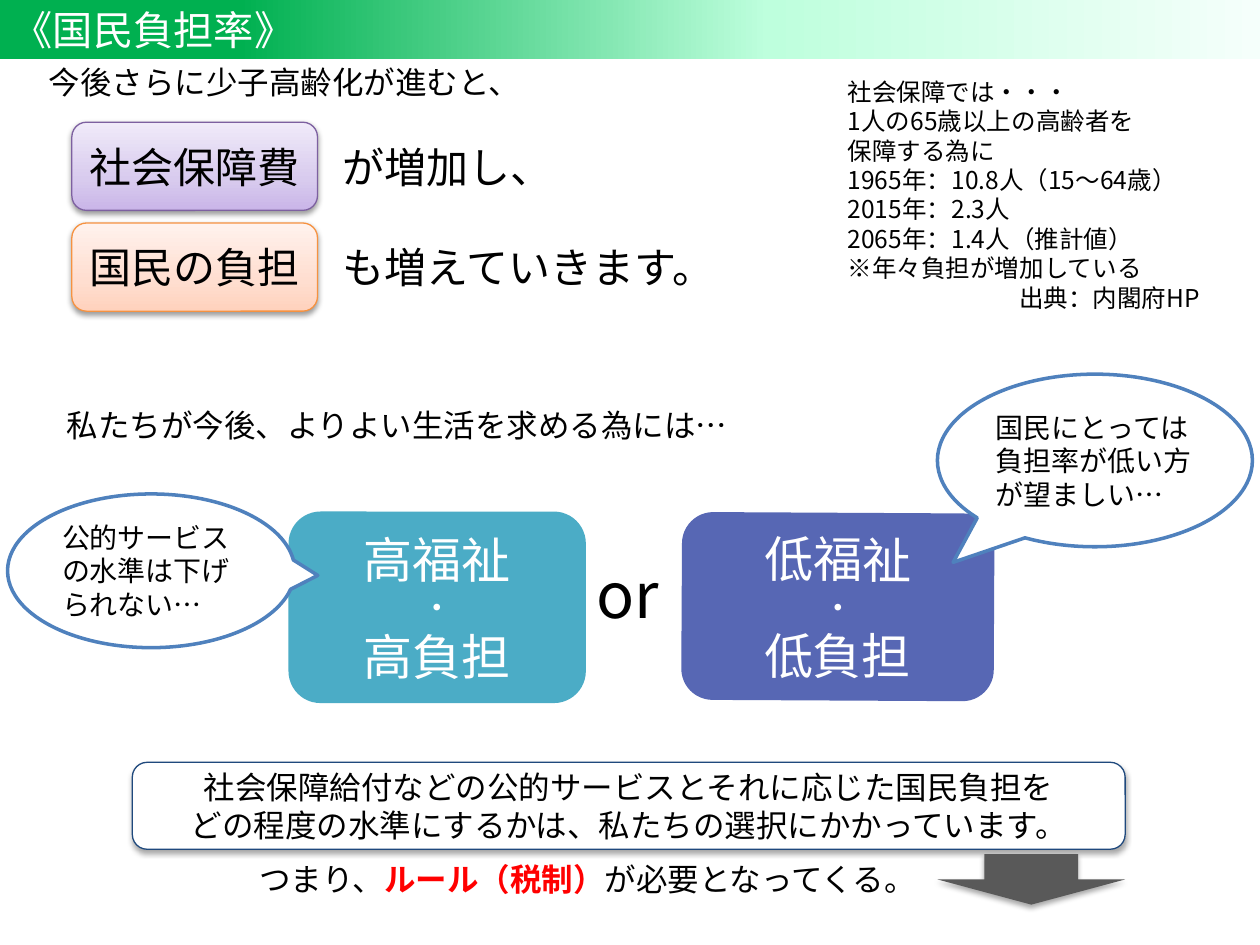
from lxml import etree
from pptx import Presentation
from pptx.dml.color import RGBColor
from pptx.enum.shapes import MSO_SHAPE
from pptx.enum.text import MSO_ANCHOR, MSO_AUTO_SIZE, PP_ALIGN
from pptx.oxml.ns import qn
from pptx.util import Inches, Pt

ROUND = MSO_SHAPE.ROUNDED_RECTANGLE
OVAL = MSO_SHAPE.OVAL_CALLOUT
FRAME = MSO_SHAPE.ROUNDED_RECTANGULAR_CALLOUT
ARROW = MSO_SHAPE.DOWN_ARROW
LEFT, MID = PP_ALIGN.LEFT, PP_ALIGN.CENTER
TOP, CORE = MSO_ANCHOR.TOP, MSO_ANCHOR.MIDDLE
FIXED = MSO_AUTO_SIZE.NONE

BLACK = RGBColor(0x00, 0x00, 0x00)
WHITE = RGBColor(0xFF, 0xFF, 0xFF)
RED = RGBColor(0xFF, 0x00, 0x00)
GRAY = RGBColor(0x59, 0x59, 0x59)
TEAL = RGBColor(0x4B, 0xAC, 0xC6)
INDIGO = RGBColor(0x57, 0x67, 0xB4)
BLUE = RGBColor(0x4F, 0x81, 0xBD)
NAVY = RGBColor(0x1F, 0x49, 0x7D)
PURPLE = RGBColor(0x7D, 0x60, 0xA0)
ORANGE = RGBColor(0xF6, 0x92, 0x40)
LILAC = [(0, RGBColor(0xC9, 0xB5, 0xE8)), (35, RGBColor(0xD8, 0xCB, 0xEE)),
         (100, RGBColor(0xF0, 0xEA, 0xF9))]
PEACH = [(0, RGBColor(0xFF, 0xD2, 0xBD)), (35, RGBColor(0xFF, 0xDE, 0xD0)),
         (100, RGBColor(0xFF, 0xF2, 0xED))]
GREEN = [(19, RGBColor(0x00, 0xB0, 0x50)), (61, RGBColor(0xBE, 0xFF, 0xDD)),
         (100, RGBColor(0xF5, 0xFF, 0xFB))]


class Deck:
    """Holds the style and the current slide, and adds each kind of element."""

    font = "Noto Sans CJK JP"

    def __init__(self):
        self.show = Presentation()
        self.show.slide_width, self.show.slide_height = Inches(10), Inches(7.5)
        self.slide = self.show.slides.add_slide(self.show.slide_layouts[5])

    def style(self, para, size, color, align):
        para.alignment = align
        font = para.font
        font.size, font.color.rgb, font.name = Pt(size), color, self.font
        etree.SubElement(font._element, qn("a:ea"), typeface=self.font)

    def letter(self, shape, lines, size, color=BLACK, align=LEFT, anchor=CORE, wrap=True):
        frame = shape.text_frame
        frame.word_wrap, frame.auto_size = wrap, FIXED
        frame.vertical_anchor = anchor
        frame.text = "\n".join(lines)
        for para in frame.paragraphs:
            self.style(para, size, color, align)
        return frame.paragraphs

    def blend(self, shape, stops, angle):
        shape.fill.gradient()
        shape.fill.gradient_angle = angle
        ramp = shape._element.spPr.find(qn("a:gradFill")).find(qn("a:gsLst"))
        for old in list(ramp):
            ramp.remove(old)
        for pos, color in stops:
            stop = etree.SubElement(ramp, qn("a:gs"), pos=str(pos * 1000))
            etree.SubElement(stop, qn("a:srgbClr"), val=str(color))

    def shade(self, shape, alpha, dist):
        effects = shape._element.spPr.find(qn("a:effectLst"))
        outer = etree.SubElement(effects, qn("a:outerShdw"), blurRad="40000",
                                 dist=str(dist), dir="5400000", rotWithShape="0")
        color = etree.SubElement(outer, qn("a:srgbClr"), val=str(BLACK))
        etree.SubElement(color, qn("a:alpha"), val=str(alpha * 1000))

    def title(self, text):
        bar = self.slide.shapes.title
        bar.left, bar.top, bar.width, bar.height = 0, 0, Inches(10), Inches(0.47)
        self.blend(bar, GREEN, 0)
        self.letter(bar, [text], 23, WHITE)

    def shape(self, kind, box, fill=None, line=None, width=0.75, adjust=()):
        item = self.slide.shapes.add_shape(kind, *map(Inches, box))
        item.shadow.inherit = False
        if fill is not None:
            item.fill.solid()
            item.fill.fore_color.rgb = fill
        if line is None:
            item.line.fill.background()
        else:
            item.line.color.rgb, item.line.width = line, Pt(width)
        for i, value in enumerate(adjust):
            item.adjustments[i] = value
        return item

    def label(self, top, name, tail, stops, line):
        item = self.shape(ROUND, (0.57, top, 1.95, 0.7), line=line)
        self.blend(item, stops, 90)
        self.shade(item, 38, 20000)
        self.letter(item, [name], 24, align=MID, wrap=False)
        self.text((2.62, top, 3.64, 0.7), [tail], 24, anchor=CORE)

    def option(self, box, level, fill, turn=0):
        item = self.shape(ROUND, box, fill)
        item.rotation = turn
        lines = [level + "福祉", "・", level + "負担"]
        paras = self.letter(item, lines, 28, WHITE, MID)
        paras[1].font.size = Pt(18)

    def bubble(self, box, text, tip):
        item = self.shape(OVAL, box, WHITE, BLUE, 2, tip)
        self.letter(item, [text], 16)

    def text(self, box, lines, size, align=LEFT, anchor=TOP):
        item = self.slide.shapes.add_textbox(*map(Inches, box))
        return self.letter(item, lines, size, BLACK, align, anchor)


def main():
    deck = Deck()
    deck.title("《国民負担率》")

    deck.text((0.29, 0.45, 5.97, 0.4), ["今後さらに少子高齢化が進むと、"], 18)
    deck.label(0.97, "社会保障費", "が増加し、", LILAC, PURPLE)
    deck.label(1.77, "国民の負担", "も増えていきます。", PEACH, ORANGE)

    facts = deck.text((6.63, 0.56, 3.32, 1.99), [
        "社会保障では・・・",
        "1人の65歳以上の高齢者を",
        "保障する為に",
        "1965年：10.8人（15～64歳）",
        "2015年：2.3人",
        "2065年：1.4人（推計値）",
        "※年々負担が増加している",
        "出典：内閣府HP",
    ], 14)
    facts[-1]._p.get_or_add_pPr().set("marL", str(Inches(1.36)))

    deck.text((0.43, 3.17, 6.45, 0.4), ["私たちが今後、よりよい生活を求める為には…"], 18)
    deck.option((2.29, 4.06, 2.36, 1.52), "高", TEAL)
    deck.option((5.41, 4.07, 2.48, 1.49), "低", INDIGO, 0.3)
    deck.text((4.42, 4.36, 1.12, 0.71), ["or"], 36, MID)
    deck.bubble((7.44, 2.97, 2.5, 1.37), "国民にとっては負担率が低い方が望ましい…", (-0.45, 0.59))
    deck.bubble((0.06, 3.92, 2.28, 1.22), "公的サービスの水準は下げられない…", (0.58, 0.03))

    frame = deck.shape(FRAME, (1.05, 6.05, 7.88, 0.69), WHITE, NAVY, adjust=(-0.5, 0.32, 0.17))
    deck.shade(frame, 35, 23000)
    deck.letter(frame, [
        "社会保障給付などの公的サービスとそれに応じた国民負担を",
        "どの程度の水準にするかは、私たちの選択にかかっています。",
    ], 18, align=MID, wrap=False)

    close = deck.text((1.96, 6.78, 7.18, 0.4), ["つまり、"], 18)[0]
    rule = close.add_run()
    rule.text = "ルール（税制）"
    rule.font.bold, rule.font.color.rgb = True, RED
    close.add_run().text = "が必要となってくる。"
    arrow = deck.shape(ARROW, (7.44, 6.78, 1.49, 0.4), GRAY)
    deck.shade(arrow, 35, 23000)

    deck.show.save("out.pptx")


if __name__ == "__main__":
    main()
